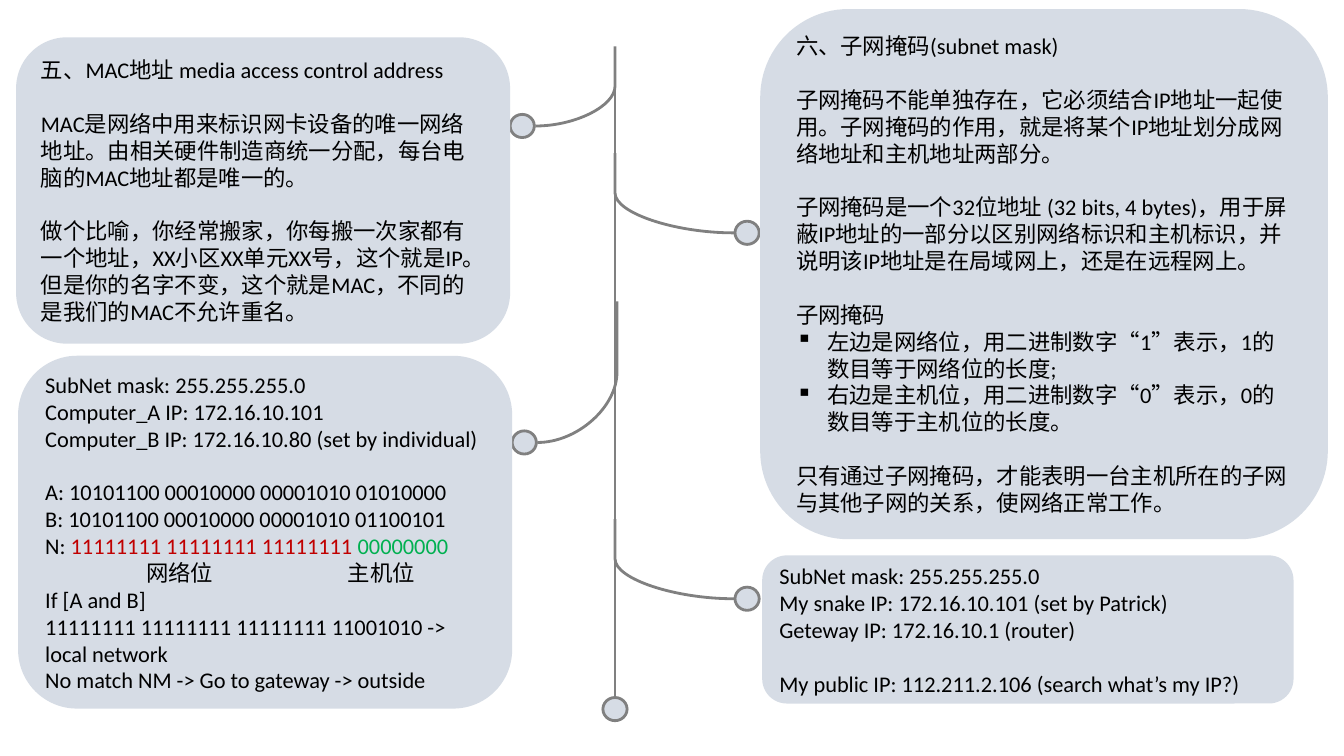
"""Build the slide on MAC addresses and subnet masks along a branching trunk."""
from lxml import etree
from pptx import Presentation
from pptx import util as u
from pptx.dml.color import RGBColor
from pptx.enum import shapes, text
from pptx.oxml.ns import qn

COLORS = {"panel": "D6DCE5", "wire": "808080", "ink": "000000",
          "network": "C00000", "host": "00B050"}
FONT = {"name": "Calibri", "size": u.Pt(16)}
FRAME = {"word_wrap": True, "vertical_anchor": text.MSO_ANCHOR.MIDDLE}
BLANK_LINE = u.Pt(19.2)
BULLET = "▪"
TRUNK_X, TRUNK_TOP, TRUNK_END = 6.1, 0.62, 6.92
DOT_WIDTH, DOT_HEIGHT = 0.24, 0.23

BRANCHES = [
    (6.1, 5.15, 7.28, 5.94),
    (6.1, 1.52, 7.28, 2.31),
    (6.1, 0.46, 5.31, 1.25),
    (6.12, 2.99, 5.33, 4.39),
]

PANELS = [
    ((0.16, 0.37, 4.9, 3.04), [
        ["五、MAC地址 media access control address"],
        ["MAC是网络中用来标识网卡设备的唯一网络地址。由相关硬件制造商统一分配，每台电脑的MAC地址都是唯一的。"],
        ["做个比喻，你经常搬家，你每搬一次家都有一个地址，XX小区XX单元XX号，这个就是IP。"
         "但是你的名字不变，这个就是MAC，不同的是我们的MAC不允许重名。"],
    ]),
    ((7.54, 0.09, 5.63, 5.26), [
        ["六、子网掩码(subnet mask)"],
        ["子网掩码不能单独存在，它必须结合IP地址一起使用。子网掩码的作用，就是将某个IP地址划分成网络地址和主机地址两部分。"],
        ["子网掩码是一个32位地址 (32 bits, 4 bytes)，用于屏蔽IP地址的一部分以区别网络标识和主机标识，"
         "并说明该IP地址是在局域网上，还是在远程网上。"],
        ["子网掩码",
         BULLET + "左边是网络位，用二进制数字“1”表示，1的数目等于网络位的长度;",
         BULLET + "右边是主机位，用二进制数字“0”表示，0的数目等于主机位的长度。"],
        ["只有通过子网掩码，才能表明一台主机所在的子网与其他子网的关系，使网络正常工作。"],
    ]),
    ((0.18, 3.53, 4.9, 3.5), [
        ["SubNet mask: 255.255.255.0",
         "Computer_A IP: 172.16.10.101",
         "Computer_B IP: 172.16.10.80 (set by individual)"],
        ["A: 10101100 00010000 00001010 01010000",
         "B: 10101100 00010000 00001010 01100101",
         [("N: ", "ink"), ("11111111 11111111 11111111 ", "network"), ("00000000", "host")],
         "\t网络位\t主机位",
         "If [A and B]",
         "11111111 11111111 11111111 11001010 -> local network",
         "No match NM -> Go to gateway -> outside"],
    ]),
    ((7.56, 5.51, 5.27, 1.47), [
        ["SubNet mask: 255.255.255.0",
         "My snake IP: 172.16.10.101 (set by Patrick)",
         "Geteway IP: 172.16.10.1 (router)"],
        ["My public IP: 112.211.2.106 (search what’s my IP?)"],
    ]),
]


def apply(target, values):
    for key, value in values.items():
        setattr(target, key, value)


def color(name):
    return RGBColor.from_string(COLORS[name])


class Sketch:
    def __init__(self, slide):
        self.slide = slide

    def solid(self, kind, left, top, width, height):
        shape = self.slide.shapes.add_shape(
            kind, *map(u.Inches, (left, top, width, height)))
        shape.shadow.inherit = False
        shape.fill.solid()
        shape.fill.fore_color.rgb = color("panel")
        return shape

    def stroke(self, line):
        line.color.rgb = color("wire")
        line.width = u.Pt(2)

    def wire(self, kind, *ends):
        wire = self.slide.shapes.add_connector(kind, *map(u.Inches, ends))
        self.stroke(wire.line)
        properties = wire._element.spPr
        etree.SubElement(properties, qn("a:effectLst"))
        if kind == shapes.MSO_CONNECTOR.CURVE:
            guides = properties.find(qn("a:prstGeom")).find(qn("a:avLst"))
            etree.SubElement(guides, qn("a:gd"), name="adj1", fmla="val 0")

    def dot(self, left, middle):
        dot = self.solid(shapes.MSO_SHAPE.OVAL, left, middle - DOT_HEIGHT / 2,
                         DOT_WIDTH, DOT_HEIGHT)
        self.stroke(dot.line)

    def branch(self, start_x, start_y, end_x, end_y):
        self.wire(shapes.MSO_CONNECTOR.CURVE, start_x, start_y, end_x, end_y)
        self.dot(end_x + 0.01 if end_x > start_x else end_x - 0.01 - DOT_WIDTH, end_y)

    def panel(self, place, groups):
        panel = self.solid(shapes.MSO_SHAPE.ROUNDED_RECTANGLE, *place)
        panel.line.fill.background()
        frame = panel.text_frame
        apply(frame, FRAME)
        for group_index, group in enumerate(groups):
            for line_index, line in enumerate(group):
                first = group_index == line_index == 0
                paragraph = frame.paragraphs[0] if first else frame.add_paragraph()
                if group_index and not line_index:
                    paragraph.space_before = BLANK_LINE
                self.fill_line(paragraph, line)

    def fill_line(self, paragraph, line):
        paragraph.alignment = text.PP_ALIGN.LEFT
        parts = [(line, "ink")] if isinstance(line, str) else line
        if parts[0][0].startswith(BULLET):
            parts = [(line.removeprefix(BULLET), "ink")]
            self.bullet(paragraph)
        elif "\t" in parts[0][0]:
            self.tabs(paragraph, 1, 3)
        for words, tone in parts:
            run = paragraph.add_run()
            run.text = words
            apply(run.font, FONT)
            run.font.color.rgb = color(tone)

    def bullet(self, paragraph):
        properties = paragraph._p.get_or_add_pPr()
        indent = u.Inches(0.31)
        properties.set("marL", str(indent))
        properties.set("indent", str(-indent))
        etree.SubElement(properties, qn("a:buChar"), char=BULLET)

    def tabs(self, paragraph, *stops):
        tab_list = etree.SubElement(paragraph._p.get_or_add_pPr(), qn("a:tabLst"))
        for stop in stops:
            etree.SubElement(tab_list, qn("a:tab"), pos=str(u.Inches(stop)), algn="l")


def main():
    deck = Presentation()
    apply(deck, {"slide_width": u.Inches(13.33), "slide_height": u.Inches(7.5)})
    sketch = Sketch(deck.slides.add_slide(deck.slide_layouts[6]))
    sketch.wire(shapes.MSO_CONNECTOR.STRAIGHT, TRUNK_X, TRUNK_TOP, TRUNK_X, TRUNK_END)
    sketch.dot(TRUNK_X - DOT_WIDTH / 2, TRUNK_END + DOT_HEIGHT / 2)
    for branch in BRANCHES:
        sketch.branch(*branch)
    for place, groups in PANELS:
        sketch.panel(place, groups)
    deck.save("out.pptx")


if __name__ == "__main__":
    main()
